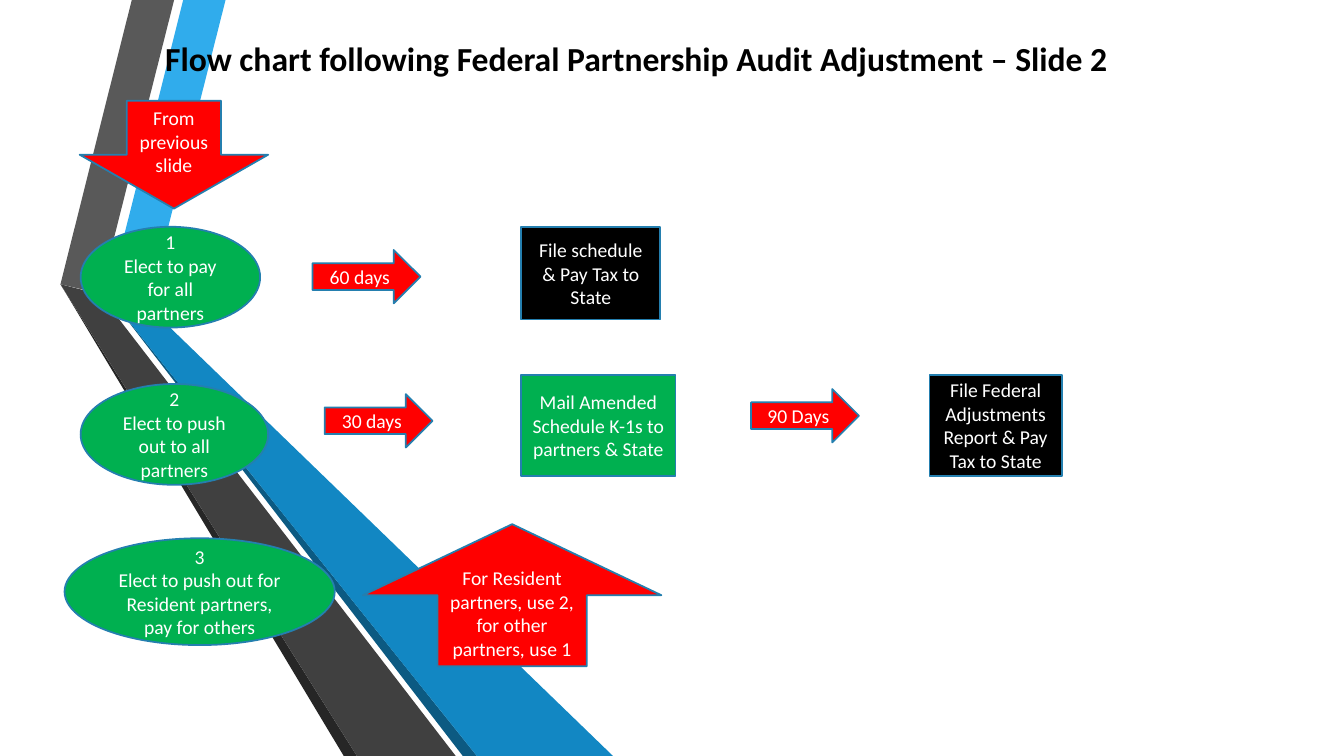
from dataclasses import dataclass

from pptx import Presentation
from pptx import util as u
from pptx.dml.color import RGBColor
from pptx.enum import shapes, text

PX = u.Inches(1) // 100
KINDS = shapes.MSO_SHAPE


@dataclass(frozen=True)
class Theme:
    font: str = "Calibri"
    title_size: int = 24
    body_size: int = 14
    outline_width: float = 1.25
    outline: str = "247FAF"
    title: str = "000000"
    label: str = "FFFFFF"
    choice: str = "00B050"
    arrow: str = "FF0000"
    filing: str = "000000"
    sky: str = "30ACEC"
    blue: str = "1287C3"
    navy: str = "0C5A82"
    grey: str = "595959"
    charcoal: str = "404040"
    coal: str = "262626"


@dataclass(frozen=True)
class Box:
    left: int
    top: int
    width: int
    height: int

    def inside(self, left, top, width, height):
        return Box(self.left + left, self.top + top, width, height)

    def emu(self):
        return [side * PX for side in (self.left, self.top, self.width, self.height)]


THEME = Theme()


def write(frame, wording, size=THEME.body_size, color=THEME.label, bold=False,
          align=text.PP_ALIGN.CENTER, anchor=text.MSO_ANCHOR.MIDDLE, wrap=True):
    frame.word_wrap = wrap
    frame.vertical_anchor = anchor
    for index, line in enumerate(wording.split("\n")):
        para = frame.paragraphs[0] if index == 0 else frame.add_paragraph()
        para.alignment = align
        span = para.add_run()
        span.text = line
        span.font.name = THEME.font
        span.font.size = u.Pt(size)
        span.font.bold = bold
        span.font.color.rgb = RGBColor.from_string(color)


def paint(shape, fill):
    shape.shadow.inherit = False
    shape.fill.solid()
    shape.fill.fore_color.rgb = RGBColor.from_string(fill)


def add_step(page, box, kind, fill, wording):
    shape = page.shapes.add_shape(kind, *box.emu())
    paint(shape, fill)
    shape.line.color.rgb = RGBColor.from_string(THEME.outline)
    shape.line.width = u.Pt(THEME.outline_width)
    write(shape.text_frame, wording)


def add_choice(page, box, wording):
    add_step(page, box, KINDS.OVAL, THEME.choice, wording)


def add_wait(page, box, wording):
    add_step(page, box, KINDS.RIGHT_ARROW, THEME.arrow, wording)


def add_ribbons(page, box):
    bottom = box.height
    ribbons = [
        (THEME.sky, [(48, 294), (87, 304), (164, -1), (122, -1)]),
        (THEME.grey, [(39, 292), (113, -1), (71, -1), (0, 282), (38, 291)]),
        (THEME.coal, [(0, 282), (281, bottom), (294, bottom)]),
        (THEME.navy, [(413, bottom), (48, 294), (399, bottom)]),
        (THEME.blue, [(48, 294), (413, bottom), (548, bottom), (87, 304)]),
        (THEME.charcoal, [(392, bottom), (46, 301), (39, 292), (0, 282), (294, bottom)]),
    ]
    for fill, points in ribbons:
        outline = page.shapes.build_freeform(*points[0], scale=PX)
        outline.add_line_segments(points[1:], close=True)
        ribbon = outline.convert_to_shape(box.left * PX, box.top * PX)
        paint(ribbon, fill)
        ribbon.line.fill.background()


def add_title(page, box):
    title = page.shapes.add_textbox(*box.emu())
    write(title.text_frame,
          "Flow chart following Federal Partnership Audit Adjustment – Slide 2",
          size=THEME.title_size, color=THEME.title, bold=True,
          align=text.PP_ALIGN.LEFT, anchor=text.MSO_ANCHOR.TOP, wrap=False)


def add_entry(page, box):
    add_step(page, box, KINDS.DOWN_ARROW, THEME.arrow, "From previous slide")


def add_pay_row(page, box):
    add_choice(page, box.inside(0, 0, 178, box.height), "1\nElect to pay for all partners")
    add_wait(page, box.inside(230, 23, 107, 53), "60 days")
    add_step(page, box.inside(437, 0, 138, 92), KINDS.RECTANGLE, THEME.filing,
             "File schedule & Pay Tax to State")


def add_push_out_row(page, box):
    add_choice(page, box.inside(0, 9, 186, 100), "2\nElect to push out to all partners")
    add_wait(page, box.inside(242, 19, 107, 53), "30 days")
    add_step(page, box.inside(437, 0, 153, 100), KINDS.RECTANGLE, THEME.choice,
             "Mail Amended Schedule K-1s to partners & State")
    add_wait(page, box.inside(665, 14, 107, 53), "90 Days")
    add_step(page, box.inside(842, 0, 131, 100), KINDS.RECTANGLE, THEME.filing,
             "File Federal Adjustments Report & Pay Tax to State")


def add_split_row(page, box):
    add_choice(page, box.inside(0, 14, 268, 106),
               "3\nElect to push out for Resident partners, pay for others")
    add_step(page, box.inside(296, 0, 296, box.height), KINDS.UP_ARROW, THEME.arrow,
             "For Resident partners, use 2, for other partners, use 1")


def main():
    deck = Presentation()
    deck.slide_width, deck.slide_height = 1333 * PX, 750 * PX
    page = deck.slides.add_slide(deck.slide_layouts[6])
    add_ribbons(page, Box(60, 0, 548, 750))
    add_pay_row(page, Box(80, 225, 575, 100))
    add_push_out_row(page, Box(80, 372, 973, 109))
    add_split_row(page, Box(64, 520, 592, 141))
    add_title(page, Box(154, 33, 964, 50))
    add_entry(page, Box(79, 100, 187, 107))
    deck.save("out.pptx")


if __name__ == "__main__":
    main()
